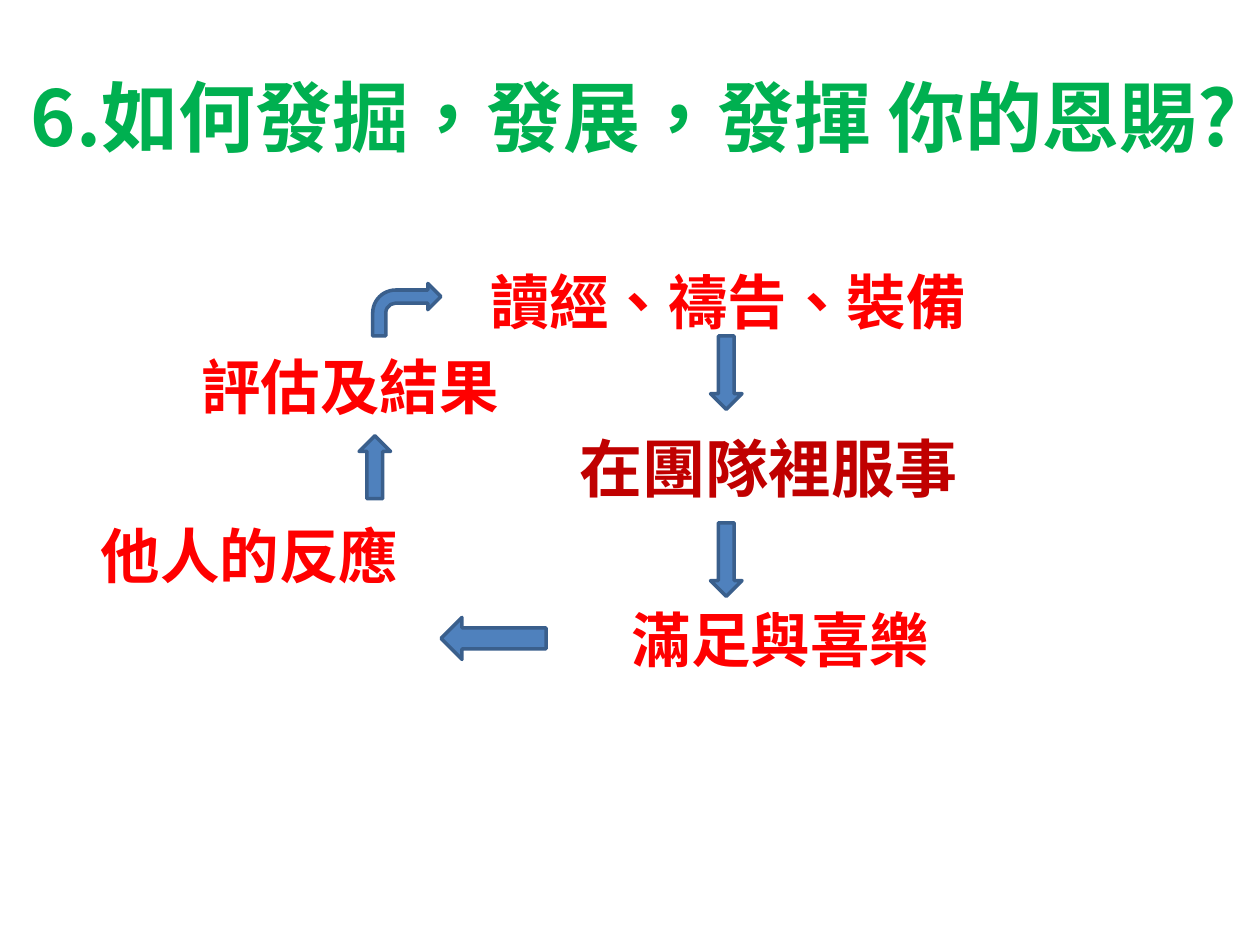
from pptx import Presentation
from pptx.dml.color import RGBColor
from pptx.enum.shapes import MSO_SHAPE as Shape
from pptx.enum.text import MSO_ANCHOR as Anchor, PP_ALIGN as Align
from pptx.oxml.ns import qn
from pptx.util import Pt

FONT = "Noto Sans CJK TC"
RED, DARK_RED, GREEN = "FF0000", "C00000", "00B050"
ARROW_FILL, ARROW_LINE = "4F81BD", "3A5F8C"
LINE_PITCH = 48.3

# text, left indent, size, colour
STEPS = [
    ("讀經、禱告、裝備", 237, 34, RED),
    ("評估及結果", 72, 34, RED),
    ("在團隊裡服事", 288, 36, DARK_RED),
    ("他人的反應", 14.5, 34, RED),
    ("滿足與喜樂", 318, 34, RED),
]

# shape, then left, top, width, height relative to the cycle's box
ARROWS = [
    (Shape.DOWN_ARROW, 370, 48, 18, 42),
    (Shape.DOWN_ARROW, 370, 154.8, 18, 42),
    (Shape.LEFT_ARROW, 216, 208.8, 60, 24),
    (Shape.UP_ARROW, 169.2, 105, 18, 36),
    (Shape.BENT_ARROW, 177, 18, 39, 30),
]


def color(value):
    return RGBColor.from_string(value)


def write(para, text, size, fill, align=Align.LEFT):
    para.alignment = align
    span = para.add_run()
    span.text = text
    font = span.font
    font.size, font.bold, font.name = Pt(size), True, FONT
    font.color.rgb = color(fill)
    props = font._element
    props.set("lang", "zh-TW")
    east_asian = props.makeelement(qn("a:ea"), {"typeface": FONT})
    props.find(qn("a:latin")).addnext(east_asian)


def place_title(page, left, top, width, height):
    title = page.shapes.title
    title.left, title.top = Pt(left), Pt(top)
    title.width, title.height = Pt(width), Pt(height)
    frame = title.text_frame
    frame.word_wrap = True
    frame.vertical_anchor = Anchor.MIDDLE
    write(frame.paragraphs[0], "6.如何發掘，發展，發揮 你的恩賜?", 44, GREEN, Align.CENTER)


def add_steps(page, left, top, width, height):
    box = page.shapes.add_textbox(Pt(left), Pt(top), Pt(width), Pt(height))
    frame = box.text_frame
    frame.word_wrap = True
    frame.margin_top = 0
    for index, (text, indent, size, fill) in enumerate(STEPS):
        para = frame.add_paragraph() if index else frame.paragraphs[0]
        para.line_spacing = Pt(LINE_PITCH)
        props = para._p.get_or_add_pPr()
        props.set("marL", str(Pt(indent)))
        props.set("indent", "0")
        write(para, text, size, fill)


def add_arrow(page, kind, left, top, width, height):
    arrow = page.shapes.add_shape(kind, Pt(left), Pt(top), Pt(width), Pt(height))
    arrow.shadow.inherit = False
    arrow.fill.solid()
    arrow.fill.fore_color.rgb = color(ARROW_FILL)
    arrow.line.color.rgb = color(ARROW_LINE)
    arrow.line.width = Pt(2)


def add_cycle(page, left, top, width, height):
    add_steps(page, left, top, width, height)
    for kind, x, y, arrow_width, arrow_height in ARROWS:
        add_arrow(page, kind, left + x, top + y, arrow_width, arrow_height)


def main():
    deck = Presentation()
    deck.slide_width, deck.slide_height = Pt(720), Pt(540)
    page = deck.slides.add_slide(deck.slide_layouts[5])
    place_title(page, 0, 12, 702, 108)
    add_cycle(page, 36, 144, 666, 384)
    deck.save("out.pptx")


if __name__ == "__main__":
    main()
